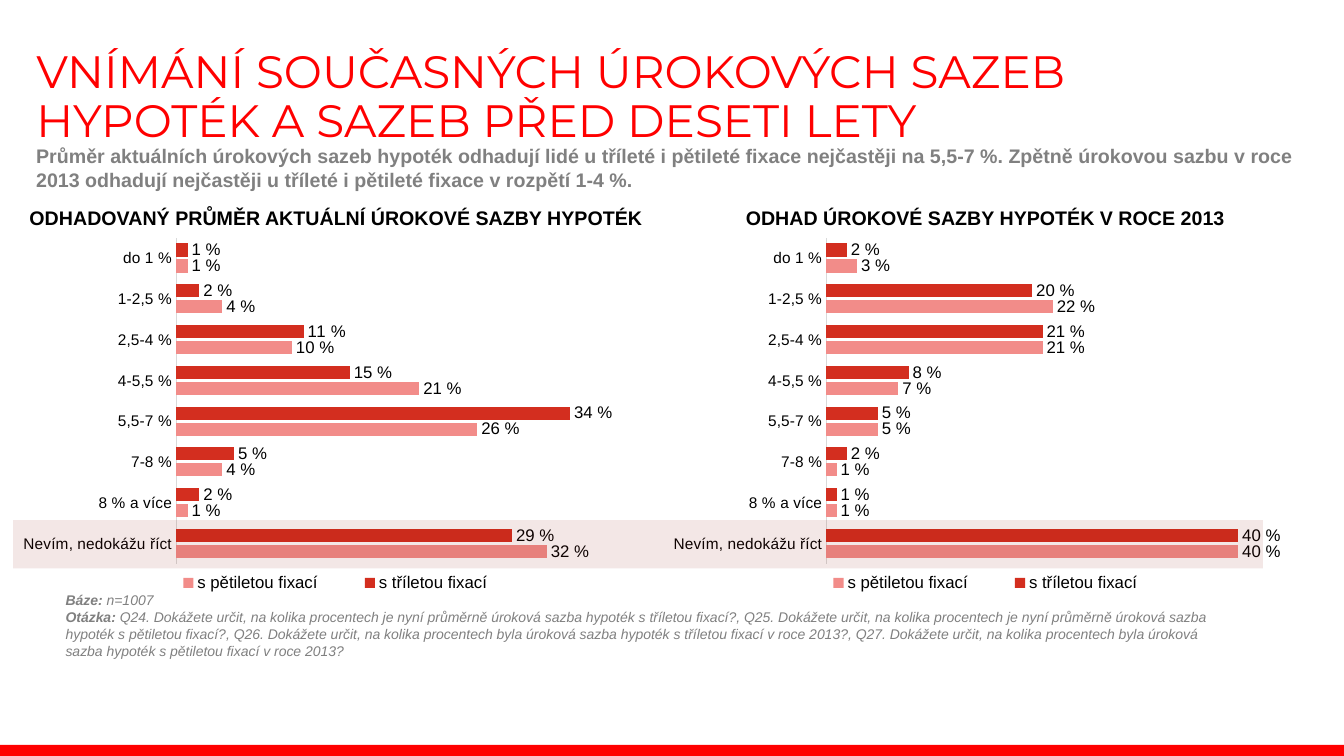
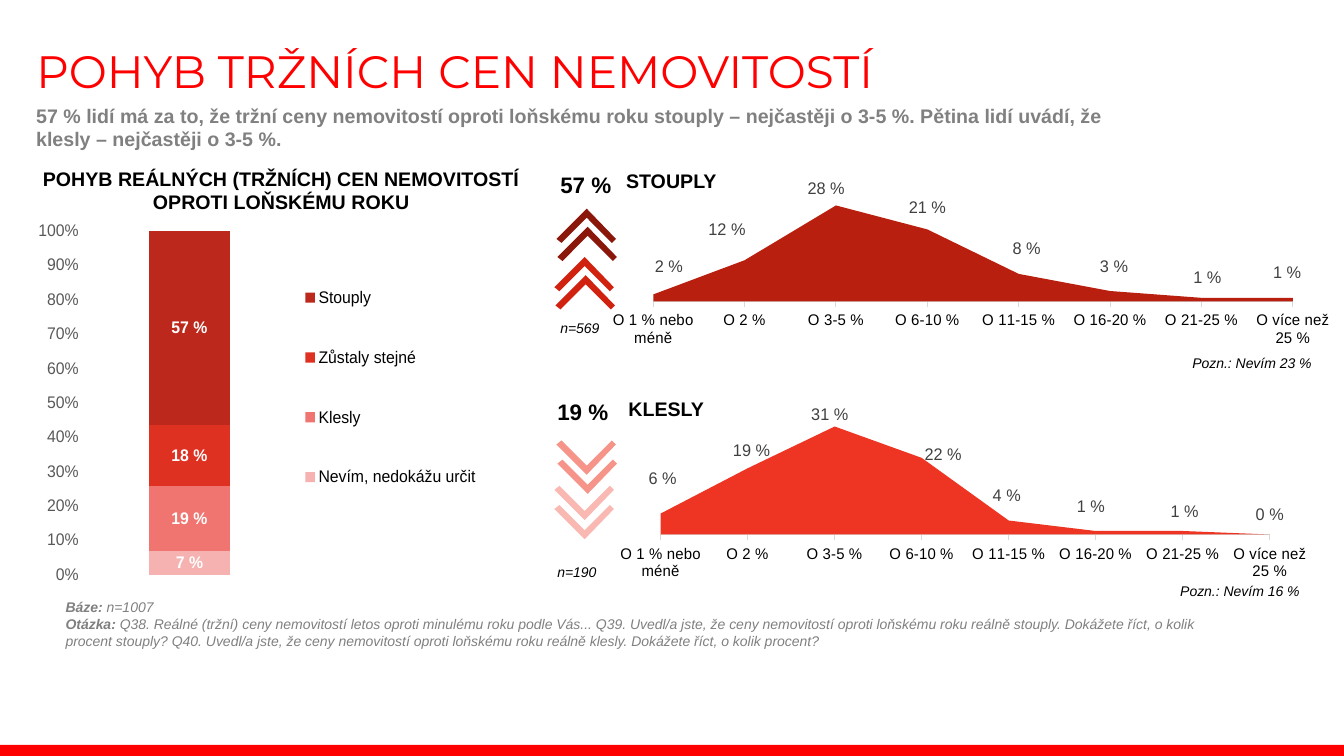
from copy import deepcopy
from lxml import etree
from pptx import Presentation, util as u
from pptx.chart.data import CategoryChartData
from pptx.dml.color import RGBColor
from pptx.enum import chart as c, shapes, text
from pptx.oxml import parse_xml
from pptx.oxml.ns import qn, nsdecls

RED = RGBColor(0xFF, 0x00, 0x00)
GREY = RGBColor(0x80, 0x80, 0x80)
BLACK = RGBColor(0x00, 0x00, 0x00)
WHITE = RGBColor(0xFF, 0xFF, 0xFF)
AXIS_TEXT = RGBColor(0x59, 0x59, 0x59)
AXIS_LINE = RGBColor(0xD9, 0xD9, 0xD9)
LABEL = RGBColor(0x40, 0x40, 0x40)
THREE_YEAR = RGBColor(0xD3, 0x2E, 0x1F)
FIVE_YEAR = RGBColor(0xF2, 0x8C, 0x89)
UNKNOWN = RGBColor(0xF5, 0xB2, 0xB0)
FELL = RGBColor(0xF0, 0x74, 0x6F)
SAME = RGBColor(0xDF, 0x31, 0x21)
ROSE = RGBColor(0xBC, 0x29, 0x1C)
AREA_UP = RGBColor(0xB9, 0x1F, 0x0F)
AREA_DOWN = RGBColor(0xEE, 0x34, 0x23)
MAROON = RGBColor(0x8B, 0x17, 0x0B)
ARROW_RED = RGBColor(0xD1, 0x22, 0x10)
SALMON = RGBColor(0xF6, 0x94, 0x8A)
PINK = RGBColor(0xF9, 0xB8, 0xB1)

CELL = u.Inches(0.1)
COLS, ROWS = 133.33, 75
PERCENT = '#,##0" %";\\-#,##0'
CENTER = text.PP_ALIGN.CENTER
MIDDLE = text.MSO_ANCHOR.MIDDLE
LAYOUT = ('<c:layout %s><c:manualLayout>{}</c:manualLayout></c:layout>' % nsdecls("c"))
FRAME = ('<c:xMode val="edge"/><c:yMode val="edge"/><c:x val="{}"/><c:y val="{}"/>'
         '<c:w val="{}"/><c:h val="{}"/>')


def style(font, size, color, bold=False, italic=False, name="Arial"):
    font.size, font.name = u.Pt(size), name
    font.bold, font.italic = bold, italic
    font.color.rgb = color


def write(s, box, lines, size, color=BLACK, bold=False, italic=False,
          align=text.PP_ALIGN.LEFT, anchor=text.MSO_ANCHOR.TOP, inset=1):
    tf = s.shapes.add_textbox(*[int(v * CELL) for v in box]).text_frame
    tf.word_wrap, tf.vertical_anchor = True, anchor
    tf.margin_left = tf.margin_right = int(inset * CELL)
    tf.margin_top = tf.margin_bottom = int(inset * CELL / 2)
    for i, runs in enumerate(lines):
        p = tf.paragraphs[0] if i == 0 else tf.add_paragraph()
        p.alignment = align
        style(p.font, size, color, bold, italic)
        for k, part in enumerate(runs):
            r = p.add_run()
            r.text = part
            if len(runs) > 1:
                r.font.bold = k == 0


prs = Presentation()
prs.slide_width, prs.slide_height = int(COLS * CELL), ROWS * CELL
layout = prs.slide_layouts[5]

pages = [
    ("VNÍMÁNÍ SOUČASNÝCH ÚROKOVÝCH SAZEB HYPOTÉK A SAZEB PŘED DESETI LETY",
     "Průměr aktuálních úrokových sazeb hypoték odhadují lidé u tříleté i pětileté fixace "
     "nejčastěji na 5,5-7 %. Zpětně úrokovou sazbu v roce 2013 odhadují nejčastěji u tříleté "
     "i pětileté fixace v rozpětí 1-4 %.", (2.6, 13.8, 126.9, 7),
     "Q24. Dokážete určit, na kolika procentech je nyní průměrně úroková sazba hypoték s "
     "tříletou fixací?, Q25. Dokážete určit, na kolika procentech je nyní průměrně úroková "
     "sazba hypoték s pětiletou fixací?, Q26. Dokážete určit, na kolika procentech byla "
     "úroková sazba hypoték s tříletou fixací v roce 2013?, Q27. Dokážete určit, na kolika "
     "procentech byla úroková sazba hypoték s pětiletou fixací v roce 2013?",
     (6.5, 58.7, 115.8, 6.7)),
    ("POHYB TRŽNÍCH CEN NEMOVITOSTÍ",
     "57 % lidí má za to, že tržní ceny nemovitostí oproti loňskému roku stouply – nejčastěji "
     "o 3-5 %. Pětina lidí uvádí, že klesly – nejčastěji o 3-5 %.", (2.6, 9.8, 113.5, 7),
     "Q38. Reálné (tržní) ceny nemovitostí letos oproti minulému roku podle Vás... Q39. "
     "Uvedl/a jste, že ceny nemovitostí oproti loňskému roku reálně stouply. Dokážete říct, "
     "o kolik procent stouply? Q40. Uvedl/a jste, že ceny nemovitostí oproti loňskému roku "
     "reálně klesly. Dokážete říct, o kolik procent?",
     (6.5, 59.4, 115.8, 5)),
]
for title, lead, lead_box, question, note_box in pages:
    s = prs.slides.add_slide(layout)
    sp = s.shapes.title
    sp.left, sp.top, sp.width, sp.height = [int(v * CELL) for v in (2.6, 4.4, 126.9, 5.3)]
    tf = sp.text_frame
    tf.text = title
    tf.word_wrap, tf.auto_size = True, text.MSO_AUTO_SIZE.NONE
    tf.vertical_anchor = text.MSO_ANCHOR.TOP
    p = tf.paragraphs[0]
    p.alignment, p.line_spacing = text.PP_ALIGN.LEFT, 0.9
    style(p.font, 32.4, RED, name="Montserrat")
    write(s, lead_box, [[lead]], 14, GREY, bold=True)
    write(s, note_box, [["Báze: ", "n=1007"], ["Otázka: ", question]], 10, GREY,
          italic=True, inset=0)

rates, prices = prs.slides
footer = rates.shapes.add_shape(shapes.MSO_SHAPE.RECTANGLE, 0, int(73.9 * CELL),
                                prs.slide_width, int(1.1 * CELL))
footer.shadow.inherit = False
footer.fill.solid()
footer.fill.fore_color.rgb = RED
footer.line.fill.background()
layout.shapes._spTree.append(footer._element)

BAR, AREA, STACK = (c.XL_CHART_TYPE.BAR_CLUSTERED, c.XL_CHART_TYPE.AREA,
                    c.XL_CHART_TYPE.COLUMN_STACKED_100)
rate_cats = ["do 1 %", "1-2,5 %", "2,5-4 %", "4-5,5 %", "5,5-7 %", "7-8 %",
             "8 % a více", "Nevím, nedokážu říct"]
change_cats = ["O 1 % nebo méně", "O 2 %", "O 3-5 %", "O 6-10 %", "O 11-15 %",
               "O 16-20 %", "O 21-25 %", "O více než 25 %"]
rate_plot = (0.254, 0.029, 0.731, 0.875)
legend_frames = {BAR: (0.2, 0.92, 0.61, 0.07), STACK: (0.55, 0.1, 0.4, 0.65)}
three, five = "s tříletou fixací", "s pětiletou fixací"
charts = [
    (rates, BAR, (1.5, 22.5, 62.9, 37), rate_plot, 40, rate_cats,
     [(three, [1, 2, 11, 15, 34, 5, 2, 29], THREE_YEAR),
      (five, [1, 4, 10, 21, 26, 4, 1, 32], FIVE_YEAR)], []),
    (rates, BAR, (66, 22.5, 62.9, 37), rate_plot, 45, rate_cats,
     [(three, [2, 20, 21, 8, 5, 2, 1, 40], THREE_YEAR),
      (five, [3, 22, 21, 7, 5, 1, 1, 40], FIVE_YEAR)], []),
    (prices, AREA, (60.8, 17.4, 71.1, 19.9), (0.04, 0.116, 0.919, 0.512), 30, change_cats,
     [("Series 1", [2, 12, 28, 21, 8, 3, 1, 1], AREA_UP)],
     [(1.6, -2.8), (-1.8, -3), (-1, -1.7), (0, -2.2), (0.8, -2.5), (0.4, -2.4),
      (0.6, -2), (-0.6, -2.5)]),
    (prices, AREA, (60.8, 37.6, 68.8, 22.7), (0.071, 0.147, 0.906, 0.533), 35, change_cats,
     [("Series 1", [6, 19, 31, 22, 4, 1, 1, 0], AREA_DOWN)],
     [(0.2, -3.5), (0.4, -1.7), (-0.5, -1.2), (2.2, -0.3), (-0.2, -2.5), (-0.5, -2.4),
      (0.2, -1.9), (0, -2)]),
    (prices, STACK, (3.8, 20.2, 45.7, 42.9), (0.052, 0.063, 0.468, 0.795), None, ["1"],
     [("Nevím, nedokážu určit", [7], UNKNOWN), ("Klesly", [19], FELL),
      ("Zůstaly stejné", [18], SAME), ("Stouply", [57], ROSE)], []),
]
for s, kind, box, frame, top, cats, series, shifts in charts:
    data = CategoryChartData()
    data.categories = cats
    for name, vals, color in series:
        data.add_series(name, vals)
    ch = s.shapes.add_chart(kind, *[int(v * CELL) for v in box], data).chart
    style(ch.font, 10, BLACK)
    ch.has_title = False
    plot = ch.plots[0]
    plot.vary_by_categories = False
    ca, va = ch.category_axis, ch.value_axis
    ca.has_major_gridlines = va.has_major_gridlines = False

    area = ch._chartSpace.find(".//" + qn("c:plotArea"))
    for old in area.findall(qn("c:layout")):
        area.remove(old)
    inner = '<c:layoutTarget val="inner"/>' + FRAME.format(*frame)
    area.insert(0, parse_xml(LAYOUT.format(inner)))

    ch.has_legend = kind in legend_frames
    if ch.has_legend:
        ch.legend.position = (c.XL_LEGEND_POSITION.BOTTOM if kind == BAR
                              else c.XL_LEGEND_POSITION.RIGHT)
        ch.legend.include_in_layout = False
        style(ch.legend.font, 12, BLACK)
        legend = ch.legend._element
        for old in legend.findall(qn("c:layout")):
            legend.remove(old)
        legend.find(qn("c:legendPos")).addnext(
            parse_xml(LAYOUT.format(FRAME.format(*legend_frames[kind]))))

    if kind == STACK:
        ca.visible = False
        plot.gap_width, plot.overlap = 150, 100
        va.format.line.fill.background()
        va.tick_labels.number_format = "0%"
        va.tick_labels.number_format_is_linked = False
        style(va.tick_labels.font, 12, AXIS_TEXT)
    else:
        va.visible = False
        va.minimum_scale, va.maximum_scale = 0, top
        ca.format.line.color.rgb = AXIS_LINE
        ca.format.line.width = u.Pt(0.75)
        ca.major_tick_mark = c.XL_TICK_MARK.NONE if kind == BAR else c.XL_TICK_MARK.OUTSIDE
        style(ca.tick_labels.font, 11, BLACK)
    if kind == BAR:
        ca.reverse_order = True
        plot.gap_width, plot.overlap = 89, -22
    if kind == AREA:
        area.find(".//" + qn("c:crossBetween")).set("val", "midCat")

    label_color = {BAR: BLACK, AREA: LABEL, STACK: WHITE}[kind]
    for ser, (name, vals, color) in zip(plot.series, series):
        ser.format.fill.solid()
        ser.format.fill.fore_color.rgb = color
        labels = ser.data_labels
        labels.show_value = True
        labels.number_format, labels.number_format_is_linked = PERCENT, False
        style(labels.font, 12, label_color, bold=kind == STACK)
        if kind == BAR:
            labels.position = c.XL_LABEL_POSITION.OUTSIDE_END
        for old in labels._element.findall(qn("c:showLeaderLines")):
            labels._element.remove(old)
        etree.SubElement(labels._element, qn("c:showLeaderLines")).set("val", "0")
        for i, (dx, dy) in enumerate(shifts):
            style(ser.points[i].data_label.font, 12, label_color)
            item = labels._element.findall(qn("c:dLbl"))[i]
            half_height = vals[i] / top * frame[3] / 2
            offset = '<c:x val="{:.4f}"/><c:y val="{:.4f}"/>'.format(
                dx / box[2], dy / box[3] - half_height)
            item.insert(1, parse_xml(LAYOUT.format(offset)))
            item.insert(2, deepcopy(labels._element.find(qn("c:numFmt"))))

band = rates.shapes.add_shape(shapes.MSO_SHAPE.RECTANGLE,
                              *[int(v * CELL) for v in (1.3, 51.6, 124, 4.8)])
band.shadow.inherit = False
band.fill.solid()
band.fill.fore_color.rgb = MAROON
band.line.fill.background()
tint = band._element.spPr.find(".//" + qn("a:srgbClr"))
etree.SubElement(tint, qn("a:alpha")).set("val", "10000")

chevron = [(0.5, 3.4), (0, 3), (3, 0), (5.9, 3), (5.5, 3.4), (3, 0.9)]
arrows = [(55.3, 22.5, MAROON, True), (55.2, 20.7, MAROON, True),
          (55.1, 27.3, ARROW_RED, True), (55, 25.5, ARROW_RED, True),
          (55.2, 43.7, SALMON, False), (55.3, 45.6, SALMON, False),
          (55, 48.2, PINK, False), (55, 50.1, PINK, False)]
for x, y, color, rising in arrows:
    pts = [(int((x + a) * CELL), int((y + (b if rising else 3.4 - b)) * CELL))
           for a, b in chevron]
    fb = prices.shapes.build_freeform(*pts[0])
    fb.add_line_segments(pts[1:], close=True)
    sp = fb.convert_to_shape()
    sp.shadow.inherit = False
    sp.fill.solid()
    sp.fill.fore_color.rgb = color
    sp.line.fill.background()

headings = [
    (rates, (0, 19.7, 66.7, 3.7), ["ODHADOVANÝ PRŮMĚR AKTUÁLNÍ ÚROKOVÉ SAZBY HYPOTÉK"]),
    (rates, (64.4, 19.7, 66.7, 3.7), ["ODHAD ÚROKOVÉ SAZBY HYPOTÉK V ROCE 2013"]),
    (prices, (-1.8, 16.2, 59.4, 5.3),
     ["POHYB REÁLNÝCH (TRŽNÍCH) CEN NEMOVITOSTÍ", "OPROTI LOŇSKÉMU ROKU"]),
    (prices, (36.9, 16.1, 59.4, 3.7), ["STOUPLY"]),
    (prices, (36.4, 38.7, 59.4, 3.7), ["KLESLY"]),
]
for s, box, lines in headings:
    write(s, box, [[line] for line in lines], 14, bold=True, align=CENTER, anchor=MIDDLE)

for x, y, share in [(54.6, 16.5, "57 %"), (54.3, 39, "19 %")]:
    write(prices, (x, y, 7.5, 3.7), [[share]], 16, bold=True)
for x, y, w, note in [(54.6, 31.2, 7.5, "n=569"), (54.3, 55.4, 7.5, "n=190"),
                      (117.3, 34.7, 14.6, "Pozn.: Nevím 23 %"),
                      (116.1, 57.3, 15.8, "Pozn.: Nevím 16 %")]:
    write(prices, (x, y, w, 2.7), [[note]], 10, italic=True)

prs.save("out.pptx")
